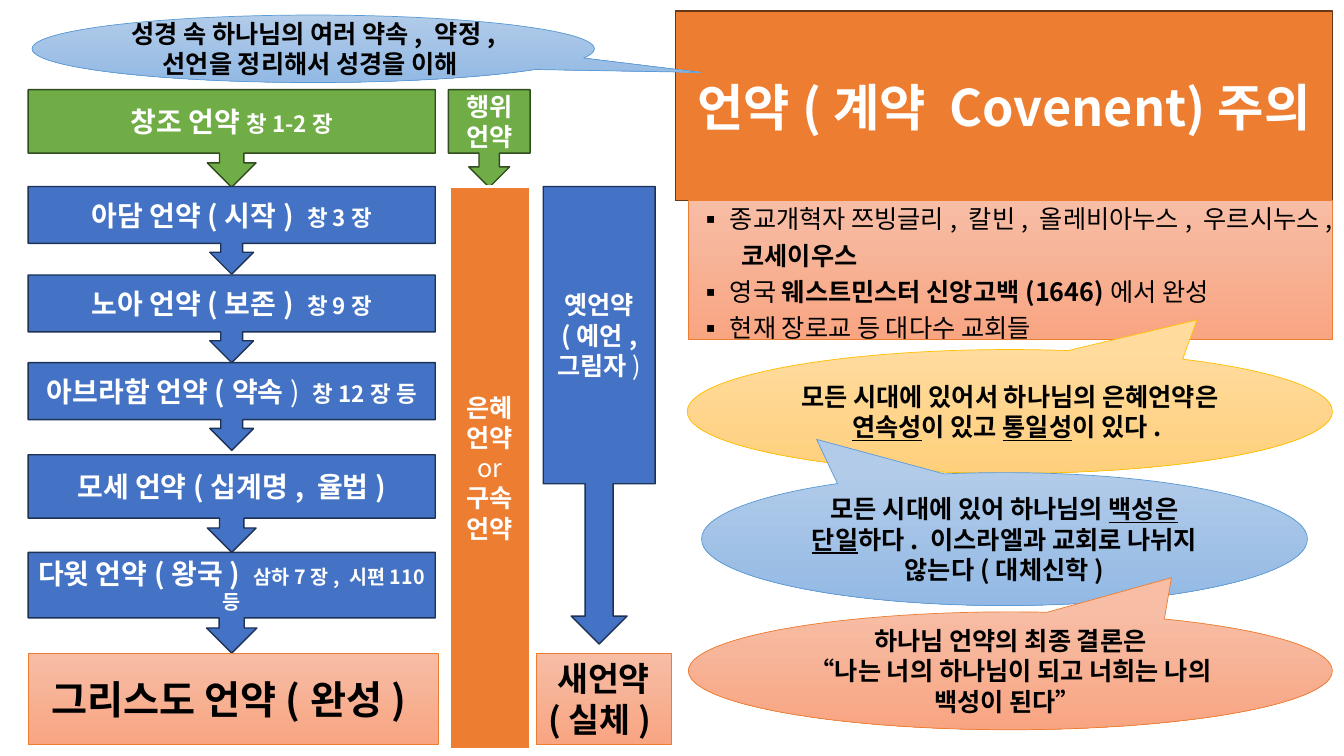
"""Builds a slide on covenant theology: the chain of covenants and its main claims."""
from lxml.etree import SubElement
from pptx import Presentation
from pptx.dml.color import RGBColor
from pptx.enum.shapes import MSO_SHAPE as SHAPE
from pptx.enum.text import MSO_ANCHOR, MSO_AUTO_SIZE, PP_ALIGN
from pptx.oxml.ns import qn
from pptx.util import Cm, Pt

FONT = "Noto Sans CJK KR"
PLAIN, UNDER = {"bold": False}, {"underline": True}
STYLES = {
    "green": (["70AD47"], "314C1F", 1, "FFFFFF"),
    "blue": (["4472C4"], "1E3256", 1, "FFFFFF"),
    "orange": (["ED7D31"], "FFFFFF", 1.5, "FFFFFF"),
    "scroll": (["ED7D31"], "683715", 1, "FFFFFF"),
    "salmon": (["F7BDA5", "F8A582"], "ED7D31", 0.5, "000000"),
    "sky": (["B1CBE9", "93B9E4"], "5B9BD5", 0.5, "000000"),
    "gold": (["FFDB9E", "FFD07C"], "FFC000", 0.5, "000000"),
}


def rgb(value):
    return RGBColor.from_string(value)


def dress(s, style, size, paragraphs, align=PP_ALIGN.CENTER):
    fills, line, width, color = STYLES[style]
    if len(fills) == 1:
        s.fill.solid()
        s.fill.fore_color.rgb = rgb(fills[0])
    else:
        s.fill.gradient()
        s.fill.gradient_angle = 270
        for stop, fill in zip(s.fill.gradient_stops, fills):
            stop.color.rgb = rgb(fill)
    s.line.color.rgb = rgb(line)
    s.line.width = Pt(width)
    tf = s.text_frame
    tf.word_wrap = True
    tf.auto_size = MSO_AUTO_SIZE.NONE
    tf.vertical_anchor = MSO_ANCHOR.MIDDLE
    for i, runs in enumerate(paragraphs):
        p = tf.add_paragraph() if i else tf.paragraphs[0]
        p.alignment = align
        p.space_before = Pt(0)
        for text, look in runs:
            r = p.add_run()
            r.text = text
            f = r.font
            f.name = FONT
            f.size = Pt(look.get("size", size))
            f.bold = look.get("bold", True)
            f.underline = look.get("underline")
            f.color.rgb = rgb(color)
            SubElement(f._element, qn("a:ea"), typeface=FONT)


prs = Presentation()
prs.slide_width, prs.slide_height = Cm(33.87), Cm(19.05)
slide = prs.slides.add_slide(prs.slide_layouts[1])
title, body = slide.placeholders

title.left, title.top, title.width, title.height = Cm(17.02), Cm(0.28), Cm(16.56), Cm(4.78)
geom = SubElement(title._element.spPr, qn("a:prstGeom"), prst="horizontalScroll")
SubElement(geom, qn("a:avLst"))
dress(title, "scroll", 36, [[("언약(계약 Covenent)주의", {})]])

body.left, body.top, body.width, body.height = Cm(17.35), Cm(5.05), Cm(16.23), Cm(3.51)
dress(body, "salmon", 18, [
    [("종교개혁자 쯔빙글리, 칼빈, 올레비아누스, 우르시누스, ", PLAIN), ("코세이우스", {})],
    [("영국 ", PLAIN), ("웨스트민스터 신앙고백(1646)", {}), ("에서 완성", PLAIN)],
    [("현재 장로교 등 대다수 교회들", PLAIN)],
], PP_ALIGN.LEFT)
for p in body.text_frame.paragraphs:
    p.line_spacing = 1.2
    pPr = p._p.get_or_add_pPr()
    pPr.set("marL", str(Cm(0.79)))
    pPr.set("indent", str(-Cm(0.79)))
    SubElement(pPr, qn("a:buFont"), typeface=FONT)
    SubElement(pPr, qn("a:buChar"), char="▪")

chain = [
    (2.26, 2.46, "green", "창조 언약 ", "창1-2장", 16),
    (4.7, 2.21, "blue", "아담 언약(시작) ", "창3장", 16),
    (6.93, 2.21, "blue", "노아 언약(보존) ", "창9장", 16),
    (9.14, 2.21, "blue", "아브라함 언약(약속", "창12장 등", 16),
    (11.46, 2.46, "blue", "모세 언약(십계명, 율법)", "", 16),
    (13.92, 2.54, "blue", "다윗 언약(왕국) ", "삼하7장, 시편110등", 14),
]
for top, height, style, name, verse, verse_size in chain:
    s = slide.shapes.add_shape(SHAPE.DOWN_ARROW_CALLOUT, Cm(0.71), Cm(top), Cm(10.26), Cm(height))
    s.shadow.inherit = False
    runs = [(name, {})]
    if name.endswith("약속"):
        runs.append((") ", PLAIN))
    if verse:
        runs.append((verse, {"size": verse_size}))
    dress(s, style, 20, [runs])

blocks = [
    (SHAPE.RECTANGLE, 0.71, 16.46, 10.34, 2.31, "salmon", 28, [[("그리스도 언약(완성) ", {})]]),
    (SHAPE.DOWN_ARROW_CALLOUT, 11.3, 2.26, 2.06, 2.46, "green", 18, [[("행위 언약", {})]]),
    (SHAPE.RECTANGLE, 11.33, 4.7, 2.03, 14.17, "orange", 18,
     [[("은혜 언약", {})], [("or", PLAIN)], [("구속 언약", {})]]),
    (SHAPE.DOWN_ARROW_CALLOUT, 13.69, 4.7, 2.82, 11.53, "blue", 18,
     [[("옛언약", {})], [("(예언, 그림자", {}), (")", PLAIN)]]),
    (SHAPE.RECTANGLE, 13.51, 16.46, 3.4, 2.29, "salmon", 24, [[("새언약", {})], [("(실체) ", {})]]),
]
for kind, left, top, width, height, style, size, paragraphs in blocks:
    s = slide.shapes.add_shape(kind, Cm(left), Cm(top), Cm(width), Cm(height))
    s.shadow.inherit = False
    dress(s, style, size, paragraphs)

bubbles = [
    (0.81, 0.38, 14.17, 1.7, (0.69, 0.35), "sky",
     [[("성경 속 하나님의 여러 약속, 약정, 선언을 정리해서 성경을 이해 ", {})]]),
    (17.32, 8.81, 16.26, 3.12, (0.29, -0.74), "gold",
     [[("모든 시대에 있어서 하나님의 은혜언약은 ", {}), ("연속성", UNDER), ("이 있고 ", {}),
       ("통일성", UNDER), ("이 있다. ", {})]]),
    (17.68, 11.91, 15.27, 3.35, (-0.31, -0.75), "sky",
     [[("모든 시대에 있어 하나님의 ", {}), ("백성은 단일", UNDER),
       ("하다. 이스라엘과 교회로 나뉘지 않는다(대체신학)", {})]]),
    (17.35, 15.42, 16.23, 2.97, (0.25, -0.79), "salmon",
     [[("하나님 언약의 최종 결론은", {})],
      [("“나는 너의 하나님이 되고 너희는 나의 백성이 된다” ", {})]]),
]
for left, top, width, height, tip, style, paragraphs in bubbles:
    s = slide.shapes.add_shape(SHAPE.OVAL_CALLOUT, Cm(left), Cm(top), Cm(width), Cm(height))
    s.shadow.inherit = False
    s.adjustments[0], s.adjustments[1] = tip
    dress(s, style, 18, paragraphs)

prs.save("out.pptx")
